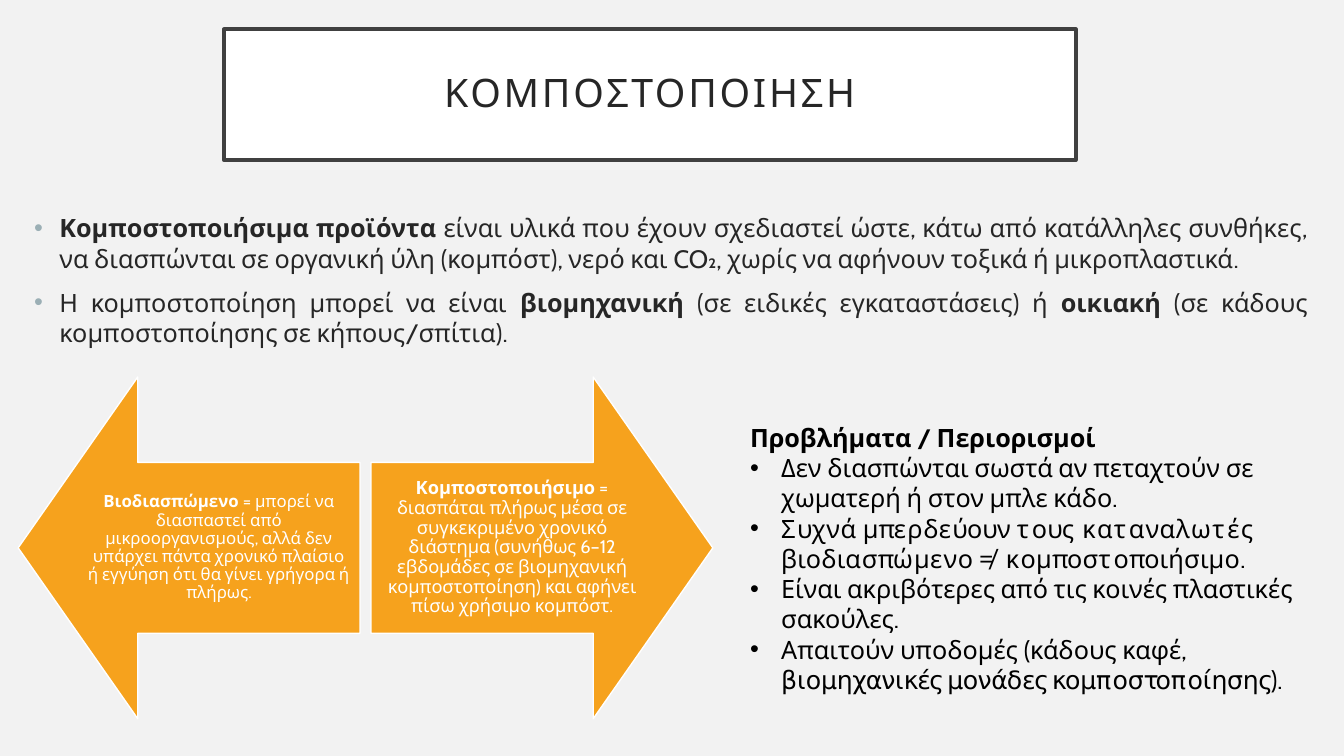
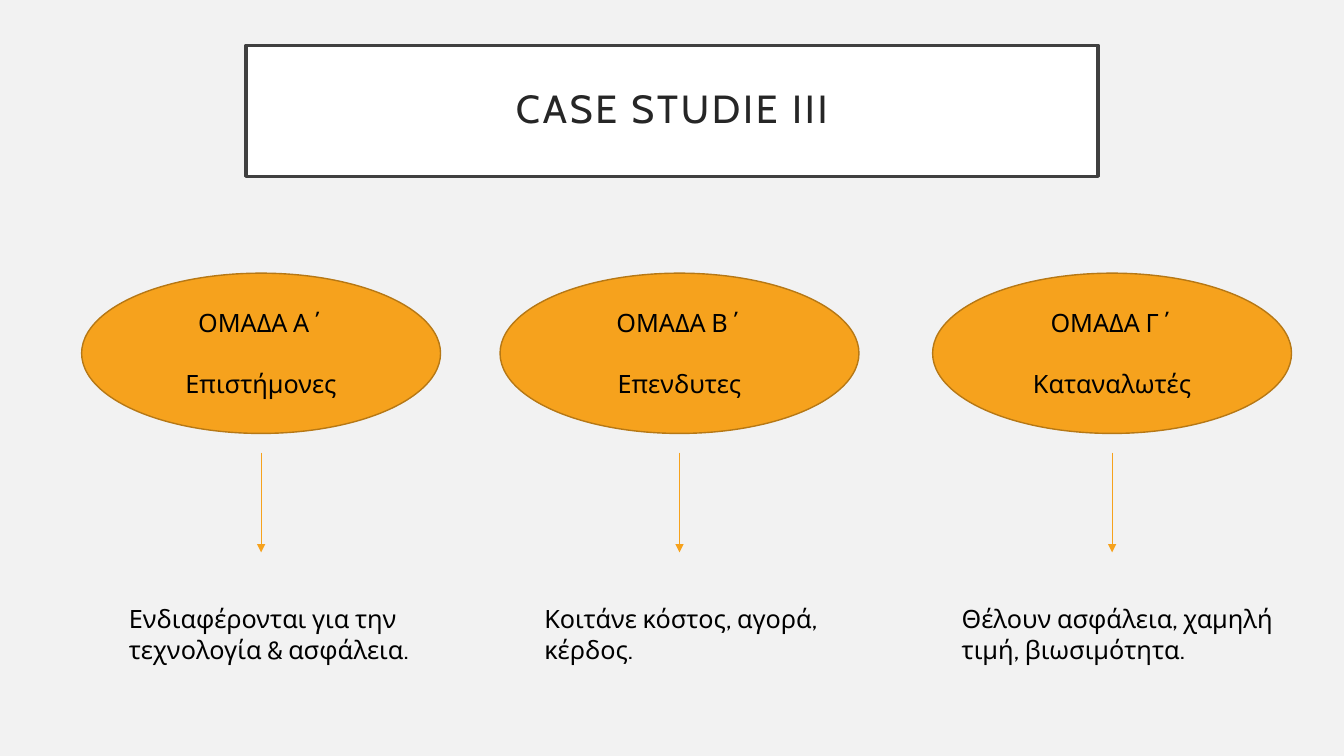
from lxml.etree import SubElement
from pptx import Presentation
from pptx.dml.color import RGBColor
from pptx.enum.shapes import MSO_CONNECTOR, MSO_SHAPE
from pptx.enum.text import MSO_ANCHOR, PP_ALIGN
from pptx.oxml.ns import qn
from pptx.util import Inches, Pt

FONT = "Cabin"
PAPER = RGBColor(0xF2, 0xF2, 0xF2)
WHITE = RGBColor(0xFF, 0xFF, 0xFF)
BLACK = RGBColor(0x00, 0x00, 0x00)
INK = RGBColor(0x26, 0x26, 0x26)
FRAME = RGBColor(0x40, 0x40, 0x40)
ORANGE = RGBColor(0xF6, 0xA2, 0x1D)
BROWN = RGBColor(0xB6, 0x78, 0x15)
BULLET_GREY = RGBColor(0x9B, 0xAF, 0xB5)

# A paragraph is a list of (text, bold) spans.
DEFINITIONS = [
    [("Κομποστοποιήσιμα προϊόντα", True),
     (" είναι υλικά που έχουν σχεδιαστεί ώστε, κάτω από κατάλληλες συνθήκες, να διασπώνται "
      "σε οργανική ύλη (κομπόστ), νερό και CO₂, χωρίς να αφήνουν τοξικά ή μικροπλαστικά.", False)],
    [("Η κομποστοποίηση μπορεί να είναι ", False), ("βιομηχανική", True),
     (" (σε ειδικές εγκαταστάσεις) ή ", False), ("οικιακή", True),
     (" (σε κάδους κομποστοποίησης σε κήπους/σπίτια).", False)],
]
# Arrow shape, left edge, text size, inset, paragraph
COMPARISON = [
    (MSO_SHAPE.LEFT_ARROW, 0.18, 12, 0.09,
     [("Βιοδιασπώμενο", True),
      (" = μπορεί να διασπαστεί από μικροοργανισμούς, αλλά δεν υπάρχει πάντα χρονικό πλαίσιο "
       "ή εγγύηση ότι θα γίνει γρήγορα ή πλήρως.", False)]),
    (MSO_SHAPE.RIGHT_ARROW, 3.68, 13, 0.1,
     [("Κομποστοποιήσιμο", True),
      (" = διασπάται πλήρως μέσα σε συγκεκριμένο χρονικό διάστημα (συνήθως 6–12 εβδομάδες σε "
       "βιομηχανική κομποστοποίηση) και αφήνει πίσω χρήσιμο κομπόστ.", False)]),
]
PROBLEMS_HEADING = "Προβλήματα / Περιορισμοί"
PROBLEMS = [
    "Δεν διασπώνται σωστά αν πεταχτούν σε χωματερή ή στον μπλε κάδο.",
    "Συχνά μπερδεύουν τους καταναλωτές βιοδιασπώμενο ≠ κομποστοποιήσιμο.",
    "Είναι ακριβότερες από τις κοινές πλαστικές σακούλες.",
    "Απαιτούν υποδομές (κάδους καφέ, βιομηχανικές μονάδες κομποστοποίησης).",
]
# Ellipse left edge, group, role, interest, interest left edge and width
GROUPS = [
    (0.81, "ΟΜΑΔΑ Α΄", "Επιστήμονες", "Ενδιαφέρονται για την τεχνολογία & ασφάλεια.", 1.18, 3.19),
    (4.96, "ΟΜΑΔΑ Β΄", "Επενδυτες", "Κοιτάνε κόστος, αγορά, κέρδος.", 5.3, 3.22),
    (9.25, "ΟΜΑΔΑ Γ΄", "Καταναλωτές", "Θέλουν ασφάλεια, χαμηλή τιμή, βιωσιμότητα.", 9.44, 3.3),
]


def add_page(deck, title, left, top):
    """Add a blank slide with the framed title."""
    page = deck.slides.add_slide(deck.slide_layouts[6])
    box = add_shape(page, MSO_SHAPE.RECTANGLE, (left, top, 8.45, 1.3), WHITE, FRAME, 2.5)
    set_insets(box, 0.2)
    write(box, [[(title, False)]], 28, INK, PP_ALIGN.CENTER, line_spacing=0.9)
    for span in box.text_frame.paragraphs[0].runs:
        span.font._element.set("spc", "200")
    return page


def add_shape(page, kind, place, fill, line, line_width):
    shape = page.shapes.add_shape(kind, *map(Inches, place))
    shape.shadow.inherit = False
    shape.fill.solid()
    shape.fill.fore_color.rgb = fill
    shape.line.color.rgb = line
    shape.line.width = Pt(line_width)
    shape.text_frame.vertical_anchor = MSO_ANCHOR.MIDDLE
    return shape


def add_text(page, place, paragraphs, color=BLACK, align=PP_ALIGN.LEFT):
    box = page.shapes.add_textbox(*map(Inches, place))
    write(box, paragraphs, 18, color, align)
    return box


def set_insets(shape, inset):
    frame = shape.text_frame
    frame.margin_left = frame.margin_right = Inches(inset)
    frame.margin_top = frame.margin_bottom = Inches(inset)


def write(shape, paragraphs, size, color, align, line_spacing=None):
    frame = shape.text_frame
    frame.word_wrap = True
    for index, spans in enumerate(paragraphs):
        para = frame.add_paragraph() if index else frame.paragraphs[0]
        para.alignment = align
        para.line_spacing = line_spacing
        for text, bold in spans:
            span = para.add_run()
            span.text = text
            span.font.name = FONT
            span.font.size = Pt(size)
            span.font.bold = bold
            span.font.color.rgb = color


def add_bullet(para, indent, color):
    properties = para._p.get_or_add_pPr()
    properties.set("marL", str(Inches(indent)))
    properties.set("indent", str(-Inches(indent)))
    bullet_color = SubElement(properties, qn("a:buClr"))
    SubElement(bullet_color, qn("a:srgbClr")).set("val", str(color))
    SubElement(properties, qn("a:buFont")).set("typeface", "Arial")
    SubElement(properties, qn("a:buChar")).set("char", "•")


def add_down_arrow(page, x, top, bottom):
    arrow = page.shapes.add_connector(
        MSO_CONNECTOR.STRAIGHT, Inches(x), Inches(top), Inches(x), Inches(bottom))
    arrow.line.color.rgb = ORANGE
    arrow.line.width = Pt(0.5)
    SubElement(arrow.line._get_or_add_ln(), qn("a:tailEnd")).set("type", "triangle")
    SubElement(arrow._element.spPr, qn("a:effectLst"))


def build_composting(deck):
    page = add_page(deck, "ΚΟΜΠΟΣΤΟΠΟΙΗΣΗ", 2.22, 0.29)

    body = add_text(page, (0.24, 2.06, 12.83, 1.79), DEFINITIONS, INK, PP_ALIGN.JUSTIFY)
    for para in body.text_frame.paragraphs:
        para.space_before = Pt(10)
        add_bullet(para, 0.25, BULLET_GREY)

    for kind, left, size, inset, spans in COMPARISON:
        arrow = add_shape(page, kind, (left, 3.74, 3.39, 3.39), ORANGE, WHITE, 1)
        arrow.adjustments[0] = 0.5
        arrow.adjustments[1] = 0.35
        set_insets(arrow, inset)
        write(arrow, [spans], size, WHITE, PP_ALIGN.CENTER, line_spacing=0.9)

    problems = [[(PROBLEMS_HEADING, True)]] + [[(text, False)] for text in PROBLEMS]
    box = add_text(page, (7.34, 4.14, 5.99, 3.13), problems)
    for para in box.text_frame.paragraphs[1:]:
        add_bullet(para, 0.31, BLACK)


def build_case_study(deck):
    page = add_page(deck, "CASE STUDIE III", 2.44, 0.45)
    width, height = 3.56, 1.59
    for left, group, role, interest, text_left, text_width in GROUPS:
        ellipse = add_shape(page, MSO_SHAPE.OVAL, (left, 2.71, width, height), ORANGE, BROWN, 1)
        write(ellipse, [[(group, False)], [(role, False)]], 18, BLACK, PP_ALIGN.CENTER)
        ellipse.text_frame.paragraphs[1].space_before = Pt(22)
        add_down_arrow(page, left + width / 2, 4.49, 5.48)
        add_text(page, (text_left, 5.94, text_width, 0.71), [[(interest, False)]])


def main():
    deck = Presentation()
    deck.slide_width = Inches(13.33)
    deck.slide_height = Inches(7.5)
    background = deck.slide_master.background.fill
    background.solid()
    background.fore_color.rgb = PAPER
    build_composting(deck)
    build_case_study(deck)
    deck.save("out.pptx")


if __name__ == "__main__":
    main()
